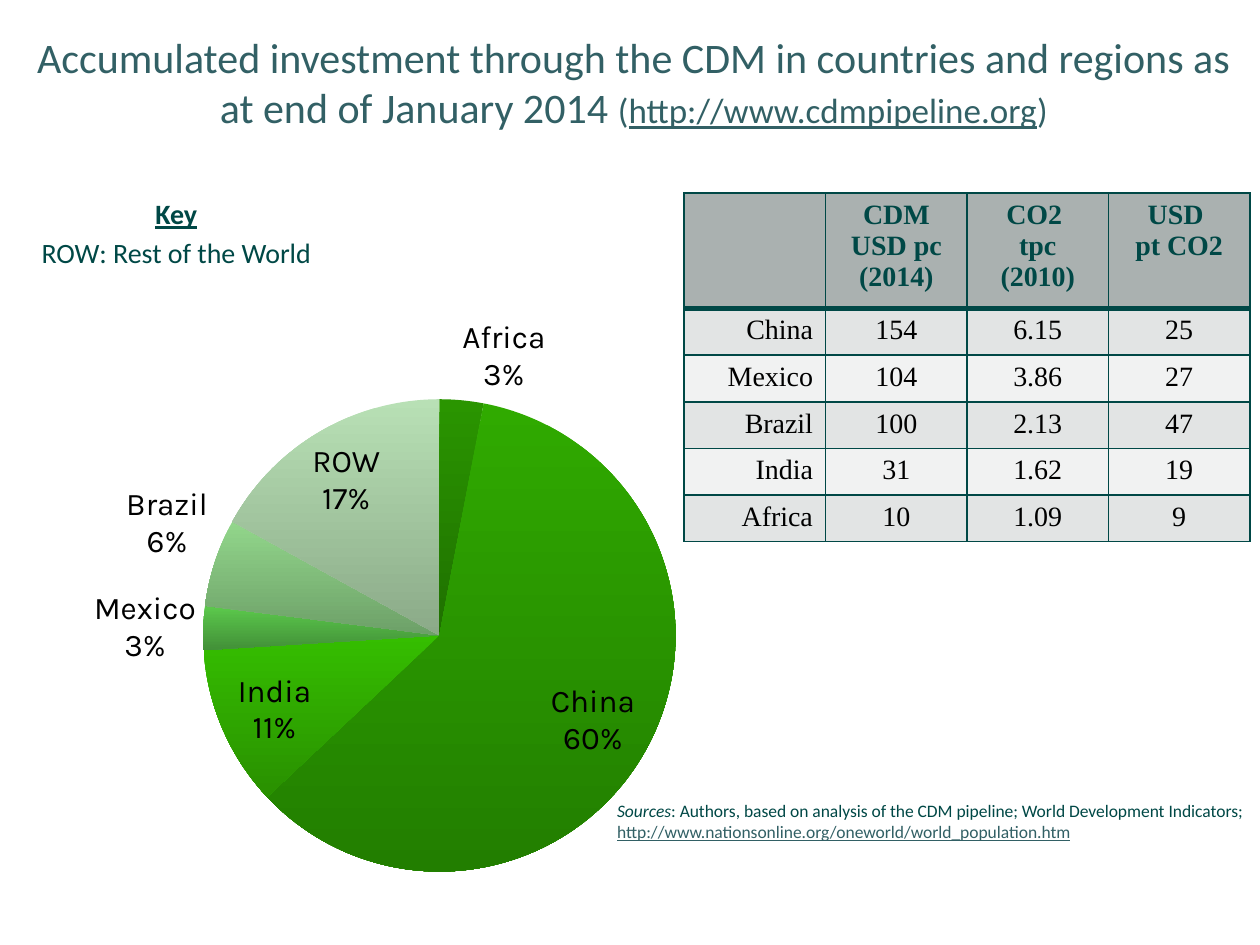
from lxml import etree
from pptx import Presentation
from pptx import util as u
from pptx.chart.data import CategoryChartData
from pptx.dml.color import RGBColor
from pptx.enum import chart as charts, text
from pptx.oxml import parse_xml
from pptx.oxml.ns import nsdecls, qn

TEAL = RGBColor(0x00, 0x48, 0x46)
SLATE = RGBColor(0x32, 0x60, 0x65)
BLACK = RGBColor(0x00, 0x00, 0x00)
HEADER_GREY = RGBColor(0xAA, 0xB1, 0xB0)
BAND_GREYS = (RGBColor(0xE2, 0xE4, 0xE4), RGBColor(0xF1, 0xF2, 0xF2))

CENTER, RIGHT = text.PP_ALIGN.CENTER, text.PP_ALIGN.RIGHT

# Region, share in percent, top and bottom colour of the slice
SHARES = (
    ("Africa", 3, RGBColor(0x2A, 0x95, 0x00), RGBColor(0x1F, 0x70, 0x00)),
    ("China", 60, RGBColor(0x30, 0xAA, 0x00), RGBColor(0x22, 0x7E, 0x00)),
    ("India", 11, RGBColor(0x35, 0xBE, 0x00), RGBColor(0x29, 0x90, 0x00)),
    ("Mexico", 3, RGBColor(0x5C, 0xC9, 0x4C), RGBColor(0x42, 0x90, 0x38)),
    ("Brazil", 6, RGBColor(0x92, 0xD6, 0x8B), RGBColor(0x6D, 0xA0, 0x68)),
    ("ROW", 17, RGBColor(0xB8, 0xE0, 0xB5), RGBColor(0x8B, 0xAA, 0x88)),
)

HEADERS = ("", "CDM USD pc (2014)", "CO2 \ntpc (2010)", "USD \npt CO2")
ROWS = (
    ("China", "154", "6.15", "25"),
    ("Mexico", "104", "3.86", "27"),
    ("Brazil", "100", "2.13", "47"),
    ("India", "31", "1.62", "19"),
    ("Africa", "10", "1.09", "9"),
)


def add_span(para, content, size=16, name="Calibri", color=TEAL,
             bold=False, italic=False, underline=False):
    span = para.add_run()
    span.text = content
    font = span.font
    font.size, font.name, font.color.rgb = u.Pt(size), name, color
    font.bold, font.italic, font.underline = bold, italic, underline


def add_text(page, left, top, width, height, paragraphs, align=None, gap=0):
    """Each paragraph is a list of (text, format) pairs."""
    box = page.shapes.add_textbox(*map(u.Inches, (left, top, width, height)))
    frame = box.text_frame
    frame.word_wrap = True
    for index, spans in enumerate(paragraphs):
        para = frame.add_paragraph() if index else frame.paragraphs[0]
        para.alignment = align
        if index:
            para.space_before = u.Pt(gap)
        for content, style in spans:
            add_span(para, content, **style)


def add_pie(page, left, top, width, height):
    data = CategoryChartData()
    data.categories = [share[0] for share in SHARES]
    data.add_series("Series 1", [share[1] for share in SHARES])
    chart = page.shapes.add_chart(
        charts.XL_CHART_TYPE.PIE, *map(u.Inches, (left, top, width, height)), data).chart
    chart.has_legend = chart.has_title = False
    chart.font.name, chart.font.size = "Karla", u.Pt(18)
    chart.font.color.rgb = BLACK
    plot = chart.plots[0]
    plot.vary_by_categories = True
    series = plot.series[0]

    # Slices shade from top to bottom
    for index, (_, _, light, dark) in enumerate(SHARES):
        fill = series.points[index].format.fill
        fill.gradient()
        fill.gradient_angle = 270
        for stop, color in zip(fill.gradient_stops, (light, dark)):
            stop.color.rgb = color

    # Region and percentage on separate lines
    labels = series.data_labels
    labels.show_value = False
    labels.show_category_name = labels.show_percentage = True
    labels.number_format, labels.number_format_is_linked = "0%", False
    labels.position = charts.XL_LABEL_POSITION.BEST_FIT
    separator = etree.Element(qn("c:separator"))
    separator.text = "\n"
    labels._element.find(qn("c:showBubbleSize")).addnext(separator)

    # Fixed place of the pie within the chart
    area = chart._chartSpace.chart.plotArea
    for old in area.findall(qn("c:layout")):
        area.remove(old)
    area.insert(0, parse_xml(
        f'<c:layout {nsdecls("c")}><c:manualLayout><c:layoutTarget val="inner"/>'
        '<c:xMode val="edge"/><c:yMode val="edge"/><c:x val="0.3"/><c:y val="0.17"/>'
        '<c:w val="0.52"/><c:h val="0.8"/></c:manualLayout></c:layout>'))


def add_borders(cell, **widths):
    properties = cell._tc.get_or_add_tcPr()
    for side in "LRTB":
        properties.append(parse_xml(
            f'<a:ln{side} {nsdecls("a")} w="{u.Pt(widths.get(side, 1))}">'
            f'<a:solidFill><a:srgbClr val="{TEAL}"/></a:solidFill></a:ln{side}>'))


def fill_cell(cell, content, fill, align, borders, **style):
    add_borders(cell, **borders)
    cell.fill.solid()
    cell.fill.fore_color.rgb = fill
    frame = cell.text_frame
    for index, line in enumerate(content.split("\n")):
        para = frame.add_paragraph() if index else frame.paragraphs[0]
        para.alignment = align
        if line:
            add_span(para, line, name="Times New Roman", **style)


def add_figures(page, left, top, width, header_height, row_height):
    height = header_height + row_height * len(ROWS)
    table = page.shapes.add_table(
        len(ROWS) + 1, len(HEADERS), *map(u.Inches, (left, top, width, height))).table
    for row in table.rows:
        row.height = u.Inches(row_height)
    table.rows[0].height = u.Inches(header_height)
    for column, header in enumerate(HEADERS):
        fill_cell(table.cell(0, column), header, HEADER_GREY, CENTER, {"B": 3}, bold=True)
    for index, values in enumerate(ROWS):
        borders = {"T": 3} if index == 0 else {}
        for column, value in enumerate(values):
            fill_cell(table.cell(index + 1, column), value, BAND_GREYS[index % 2],
                      CENTER if column else RIGHT, borders, color=BLACK)


def main():
    deck = Presentation()
    deck.slide_width, deck.slide_height = u.Inches(10), u.Inches(7.5)
    page = deck.slides.add_slide(deck.slide_layouts[6])

    # Chart and table
    add_pie(page, -0.55, 2.37, 7.21, 4.69)
    add_figures(page, 5.43, 1.53, 4.49, 0.92, 0.37)

    # Key
    add_text(page, 0, 1.51, 2.8, 0.69, [
        [("Key", dict(bold=True, underline=True))],
        [("ROW: Rest of the World", {})],
    ], align=CENTER, gap=3.2)

    # Sources
    add_text(page, 4.8, 6.3, 5.43, 0.44, [[
        ("Sources", dict(size=10, italic=True)),
        (": Authors, based on analysis of the CDM pipeline; "
         "World Development Indicators; ", dict(size=10)),
        ("http://www.nationsonline.org/oneworld/world_population.htm",
         dict(size=10, color=SLATE, underline=True)),
    ]])

    # Title
    small = dict(size=20, color=SLATE)
    add_text(page, 0.06, 0.2, 9.94, 0.91, [[
        ("Accumulated investment through the CDM in countries and regions "
         "as at end of January 2014 ", dict(size=24, color=SLATE)),
        ("(", small),
        ("http://www.cdmpipeline.org", dict(small, underline=True)),
        (")", small),
    ]], align=CENTER)

    deck.save("out.pptx")


if __name__ == "__main__":
    main()
